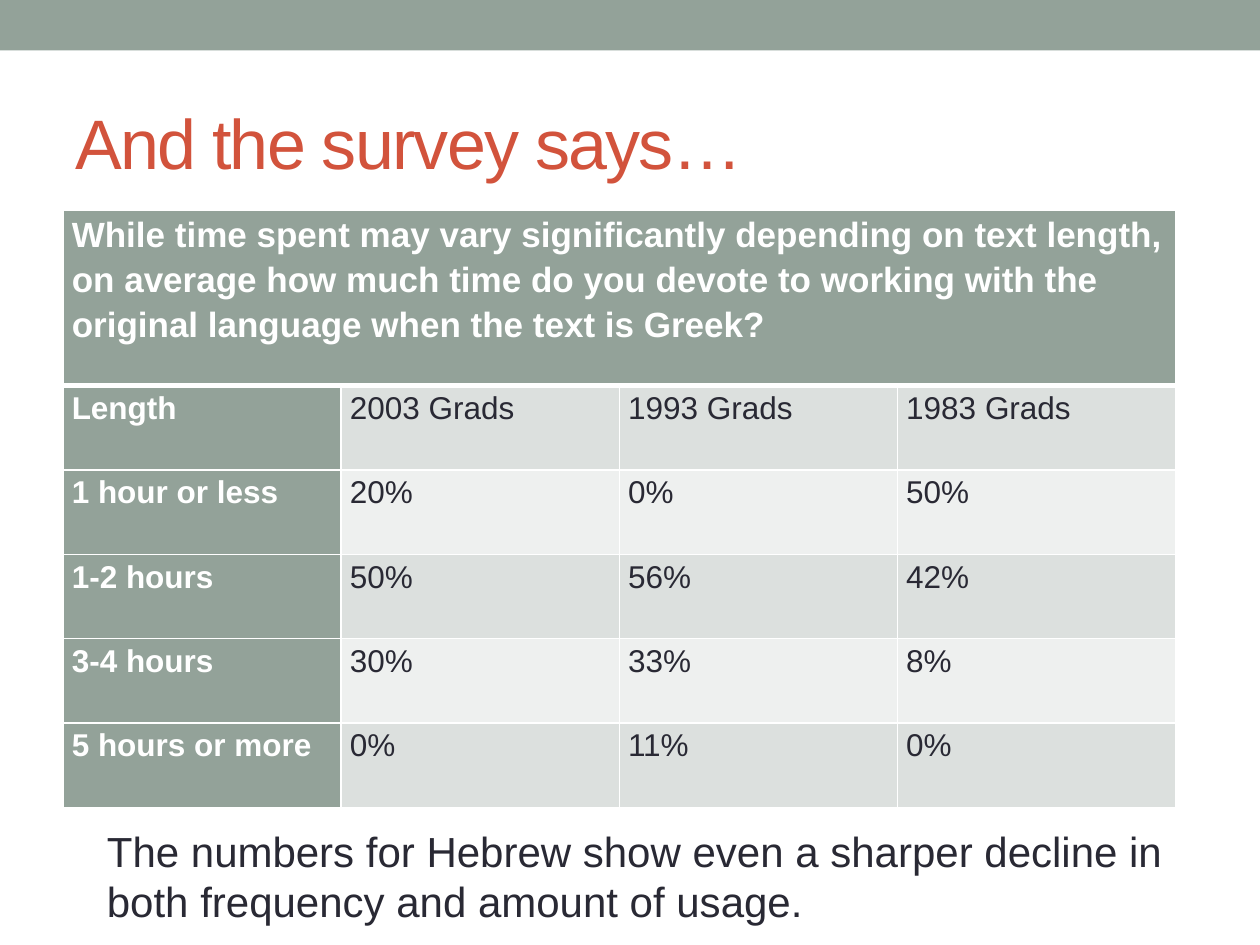
from dataclasses import dataclass

from lxml import etree
from pptx import Presentation
from pptx.dml.color import RGBColor
from pptx.enum.shapes import MSO_SHAPE
from pptx.enum.text import MSO_ANCHOR
from pptx.oxml.ns import qn
from pptx.util import Inches, Pt

RECTANGLE = MSO_SHAPE.RECTANGLE
TOP = MSO_ANCHOR.TOP
MIDDLE = MSO_ANCHOR.MIDDLE

WHITE = RGBColor(0xFF, 0xFF, 0xFF)
SAGE = RGBColor(0x93, 0xA2, 0x99)
RUST = RGBColor(0xD2, 0x53, 0x3C)
INK = RGBColor(0x29, 0x29, 0x34)
BANDS = (RGBColor(0xDC, 0xE0, 0xDE), RGBColor(0xEE, 0xF0, 0xEF))

FONT = "Arial"
TABLE_WIDTH = 8.83
QUESTION_HEIGHT = 1.39
ANSWER_HEIGHT = 0.67

QUESTION = (
    "While time spent may vary significantly depending on text length, "
    "on average how much time do you devote to working with the "
    "original language when the text is Greek?"
)
ANSWERS = (
    ("Length", "2003 Grads", "1993 Grads", "1983 Grads"),
    ("1 hour or less", "20%", "0%", "50%"),
    ("1-2 hours", "50%", "56%", "42%"),
    ("3-4 hours", "30%", "33%", "8%"),
    ("5 hours or more", "0%", "11%", "0%"),
)


@dataclass(frozen=True)
class TextStyle:
    size: int
    color: RGBColor
    bold: bool = False
    spacing: int = 0  # hundredths of a point


@dataclass(frozen=True)
class TextBlock:
    text: str
    left: float
    top: float
    width: float
    height: float
    style: TextStyle
    anchor: MSO_ANCHOR = TOP


QUESTION_STYLE = TextStyle(20, WHITE, bold=True)
LABEL_STYLE = TextStyle(18, WHITE, bold=True)
VALUE_STYLE = TextStyle(18, INK)

TEXT_BLOCKS = (
    TextBlock("And the survey says…", 0.5, 0.58, 9, 1.08,
              TextStyle(40, RUST, spacing=-100), MIDDLE),
    TextBlock("The numbers for Hebrew show even a sharper decline in "
              "both frequency and amount of usage.",
              0.75, 6.5, 8.91, 0.91, TextStyle(24, INK)),
)


def add_run(paragraph, text: str, style: TextStyle) -> None:
    run = paragraph.add_run()
    run.text = text
    run.font.name = FONT
    run.font.size = Pt(style.size)
    run.font.bold = style.bold
    run.font.color.rgb = style.color
    if style.spacing:
        run.font._element.set("spc", str(style.spacing))


def add_text_block(slide, block: TextBlock) -> None:
    shape = slide.shapes.add_textbox(
        Inches(block.left), Inches(block.top), Inches(block.width), Inches(block.height)
    )
    frame = shape.text_frame
    frame.word_wrap = True
    frame.vertical_anchor = block.anchor
    add_run(frame.paragraphs[0], block.text, block.style)


def set_borders(cell, bottom_width: int) -> None:
    """Draw white borders, 1 pt except for the bottom one."""
    properties = cell._tc.get_or_add_tcPr()
    widths = {"a:lnL": 1, "a:lnR": 1, "a:lnT": 1, "a:lnB": bottom_width}
    for index, (tag, width) in enumerate(widths.items()):
        line = etree.Element(qn(tag), w=str(Pt(width)))
        fill = etree.SubElement(line, qn("a:solidFill"))
        etree.SubElement(fill, qn("a:srgbClr"), val=str(WHITE))
        properties.insert(index, line)


def format_cell(cell, fill: RGBColor, bottom_width: int = 1) -> None:
    cell.margin_left = cell.margin_right = Inches(0.07)
    cell.margin_top = cell.margin_bottom = 0
    cell.fill.solid()
    cell.fill.fore_color.rgb = fill
    set_borders(cell, bottom_width)


def write_cell(cell, text: str, style: TextStyle) -> None:
    paragraph = cell.text_frame.paragraphs[0]
    paragraph.line_spacing = 1.15
    add_run(paragraph, text, style)


def add_survey_table(slide) -> None:
    row_count, column_count = len(ANSWERS) + 1, len(ANSWERS[0])
    height = QUESTION_HEIGHT + ANSWER_HEIGHT * len(ANSWERS)
    table = slide.shapes.add_table(
        row_count, column_count,
        Inches(0.5), Inches(1.67), Inches(TABLE_WIDTH), Inches(height),
    ).table
    table.first_col = True
    for column in table.columns:
        column.width = Inches(TABLE_WIDTH / column_count)
    for index, row in enumerate(table.rows):
        row.height = Inches(ANSWER_HEIGHT if index else QUESTION_HEIGHT)

    for column in range(column_count):
        format_cell(table.cell(0, column), SAGE, bottom_width=3)
    question_cell = table.cell(0, 0)
    question_cell.merge(table.cell(0, column_count - 1))
    write_cell(question_cell, QUESTION, QUESTION_STYLE)

    for row_index, answers in enumerate(ANSWERS):
        band = BANDS[row_index % len(BANDS)]
        for column, text in enumerate(answers):
            cell = table.cell(row_index + 1, column)
            format_cell(cell, band if column else SAGE)
            write_cell(cell, text, VALUE_STYLE if column else LABEL_STYLE)


def add_top_band(slide) -> None:
    shape = slide.shapes.add_shape(RECTANGLE, 0, 0, Inches(10), Inches(0.4))
    shape.shadow.inherit = False
    shape.fill.solid()
    shape.fill.fore_color.rgb = SAGE
    shape.line.fill.background()


def main() -> None:
    presentation = Presentation()
    presentation.slide_width = Inches(10)
    presentation.slide_height = Inches(7.5)
    slide = presentation.slides.add_slide(presentation.slide_layouts[6])
    title, conclusion = TEXT_BLOCKS
    add_top_band(slide)
    add_text_block(slide, title)
    add_survey_table(slide)
    add_text_block(slide, conclusion)
    presentation.save("out.pptx")


if __name__ == "__main__":
    main()
